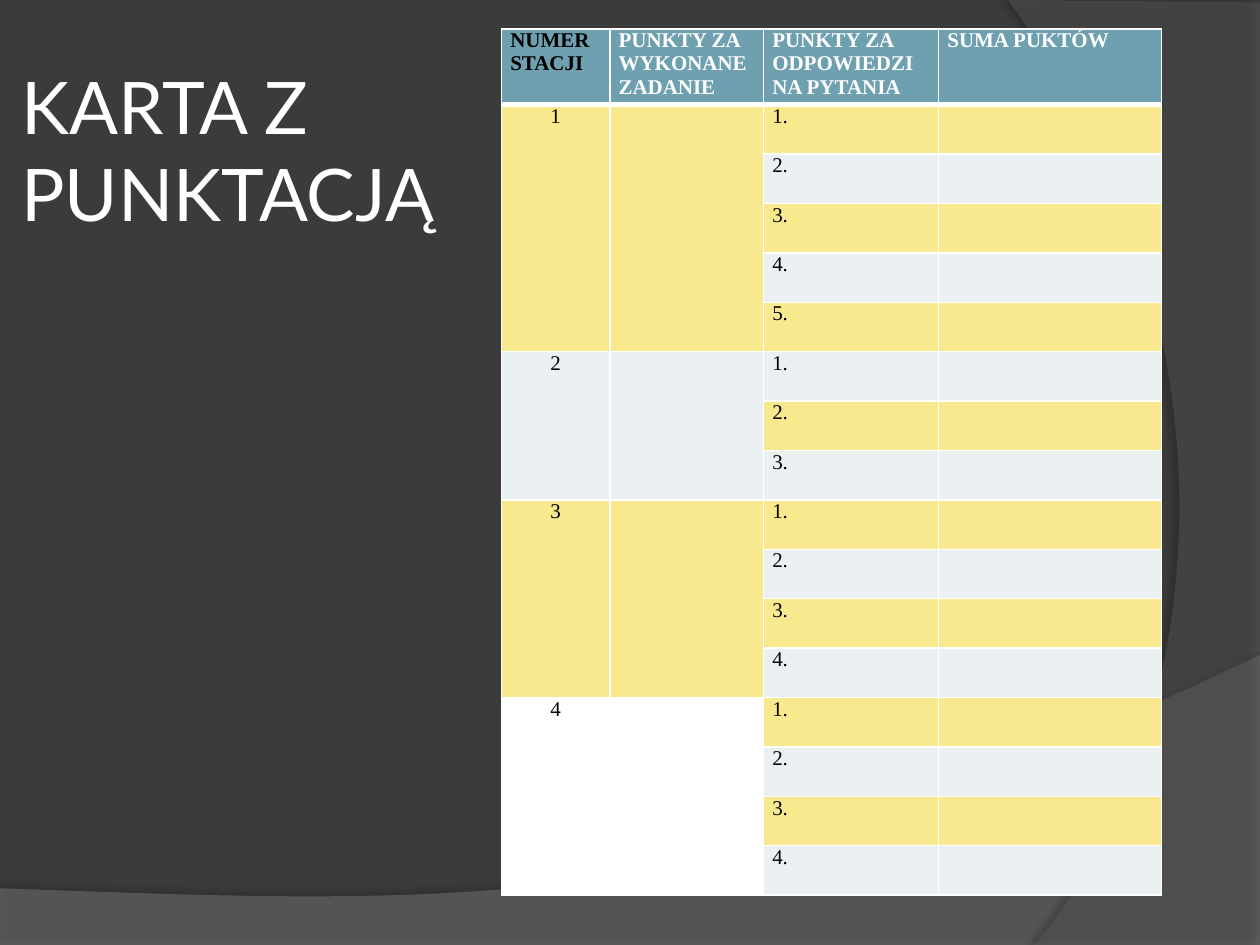
from lxml import etree
from pptx import Presentation
from pptx import util as u
from pptx.dml.color import RGBColor
from pptx.enum import text
from pptx.oxml import parse_xml
from pptx.oxml.ns import nsdecls, qn

COLORS = {
    "background": "3B3B3B", "wave": "7F7F7F", "arc": "5E5E5E",
    "header": "6EA0B0", "yellow": "F9E98E", "grey": "EBF0F2",
    "white": "FFFFFF", "black": "000000",
}
HEADERS = ["NUMER STACJI", "PUNKTY ZA WYKONANE ZADANIE",
           "PUNKTY ZA ODPOWIEDZI NA PYTANIA", "SUMA PUKTÓW"]
QUESTIONS = [5, 3, 4, 4]  # questions at each station
COLUMN_WIDTHS = [0.86, 1.22, 1.39, 1.77]
HEADER_HEIGHT = 0.59


def rgb(name):
    return RGBColor.from_string(COLORS[name])


def write(tf, content, font="Times New Roman", size=12, color="black",
          bold=False, align=text.PP_ALIGN.LEFT):
    tf.text = content
    for p in tf.paragraphs:
        p.alignment = align
        for f in [p.font] + [r.font for r in p.runs]:
            f.name, f.size, f.bold = font, u.Pt(size), bold
            f.color.rgb = rgb(color)


def bezier(start, c1, c2, end, steps=60):
    """Points along a cubic curve, without its start."""
    for i in range(1, steps + 1):
        t = i / steps
        weights = ((1 - t) ** 3, 3 * t * (1 - t) ** 2, 3 * t * t * (1 - t), t ** 3)
        yield tuple(sum(w * pt[axis] for w, pt in zip(weights, (start, c1, c2, end)))
                    for axis in (0, 1))


def add_swoosh(slide, left, top, corners, curve, color, opacity, shadow):
    """Translucent outline: straight corners, then a curve from the last one."""
    points = [(u.Inches(left + x), u.Inches(top + y))
              for x, y in corners + list(bezier(corners[-1], *curve))]
    builder = slide.shapes.build_freeform(*points[0])
    builder.add_line_segments(points[1:], close=True)
    sp = builder.convert_to_shape()
    sp.fill.solid()
    sp.fill.fore_color.rgb = rgb(color)
    sp.line.fill.background()
    sp.shadow.inherit = False
    props = sp._element.spPr
    fill_color = props.find(qn("a:solidFill"))[0]
    etree.SubElement(fill_color, qn("a:alpha"), val=str(opacity * 1000))
    alpha, blur, distance, angle = shadow
    props.find(qn("a:effectLst")).append(parse_xml(
        f'<a:outerShdw {nsdecls("a")} blurRad="{u.Pt(blur)}" dist="{u.Pt(distance)}" '
        f'dir="{angle * 60000}" algn="ctr" rotWithShape="0">'
        f'<a:srgbClr val="{COLORS["black"]}"><a:alpha val="{alpha * 1000}"/>'
        f'</a:srgbClr></a:outerShdw>'))


def add_background(slide):
    slide.background.fill.solid()
    slide.background.fill.fore_color.rgb = rgb("background")
    add_swoosh(slide, 0, 5.2, [(0, 1.85), (0, 2.31), (10, 2.31), (10, 0)],
               [(5.59, 2.09), (3.91, 1.99), (0, 1.85)],
               "wave", 45, (35, 4, 3.5, 270))
    add_swoosh(slide, 8, 0, [(2, 0.02), (2, 7.5), (0.21, 7.5)],
               [(1.35, 6.19), (2.18, 3), (0, 0)],
               "arc", 40, (45, 4, 4, 180))


def add_title(slide, left, top, width, height):
    tf = slide.shapes.add_textbox(*map(u.Inches, (left, top, width, height))).text_frame
    tf.word_wrap = True
    tf.vertical_anchor = text.MSO_ANCHOR.MIDDLE
    tf.margin_left = tf.margin_right = tf.margin_top = tf.margin_bottom = u.Inches(0.05)
    write(tf, "KARTA Z\nPUNKTACJĄ", font="Lato", size=41.4, color="white")


def style_cell(cell, fill, top=1, bottom=1):
    """Set margins, white borders (widths in points) and fill."""
    cell.margin_left = cell.margin_right = u.Inches(0.07)
    cell.margin_top = cell.margin_bottom = 0
    tc_pr = cell._tc.get_or_add_tcPr()
    for side, width in (("L", 1), ("R", 1), ("T", top), ("B", bottom)):
        tc_pr.append(parse_xml(
            f'<a:ln{side} {nsdecls("a")} w="{u.Pt(width)}"><a:solidFill>'
            f'<a:srgbClr val="{COLORS["white"]}"/></a:solidFill></a:ln{side}>'))
    cell.fill.solid()
    cell.fill.fore_color.rgb = rgb(fill)


def add_score_table(slide, left, top, width, height):
    count = sum(QUESTIONS)
    table = slide.shapes.add_table(
        count + 1, len(HEADERS), *map(u.Inches, (left, top, width, height))).table
    for column, column_width in zip(table.columns, COLUMN_WIDTHS):
        column.width = u.Inches(column_width)
    for row in table.rows:
        row.height = u.Inches((height - HEADER_HEIGHT) / count)
    table.rows[0].height = u.Inches(HEADER_HEIGHT)

    for i, header in enumerate(HEADERS):
        cell = table.cell(0, i)
        style_cell(cell, "header", bottom=3)
        write(cell.text_frame, header, bold=True, color="white" if i else "black")

    first = 1
    for station, questions in enumerate(QUESTIONS, 1):
        last = first + questions - 1
        for row in range(first, last + 1):
            band = "yellow" if row % 2 else "grey"
            if row == first:
                station_fill = "white" if station == len(QUESTIONS) else band
            labels = [str(station) if row == first else "", "",
                      f"{row - first + 1}.", ""]
            for i, label in enumerate(labels):
                cell = table.cell(row, i)
                style_cell(cell, station_fill if i < 2 else band,
                           top=3 if row == 1 else 1)
                write(cell.text_frame, label,
                      align=text.PP_ALIGN.LEFT if i else text.PP_ALIGN.CENTER)
        for i in (0, 1):
            table.cell(first, i).merge(table.cell(last, i))
        first = last + 1


def main():
    prs = Presentation()
    prs.slide_width, prs.slide_height = u.Inches(10), u.Inches(7.5)
    slide = prs.slides.add_slide(prs.slide_layouts[6])
    add_background(slide)
    add_title(slide, 0.12, 0.86, 3.7, 0.64)
    add_score_table(slide, 3.98, 0.23, sum(COLUMN_WIDTHS), 6.87)
    prs.save("out.pptx")


if __name__ == "__main__":
    main()
